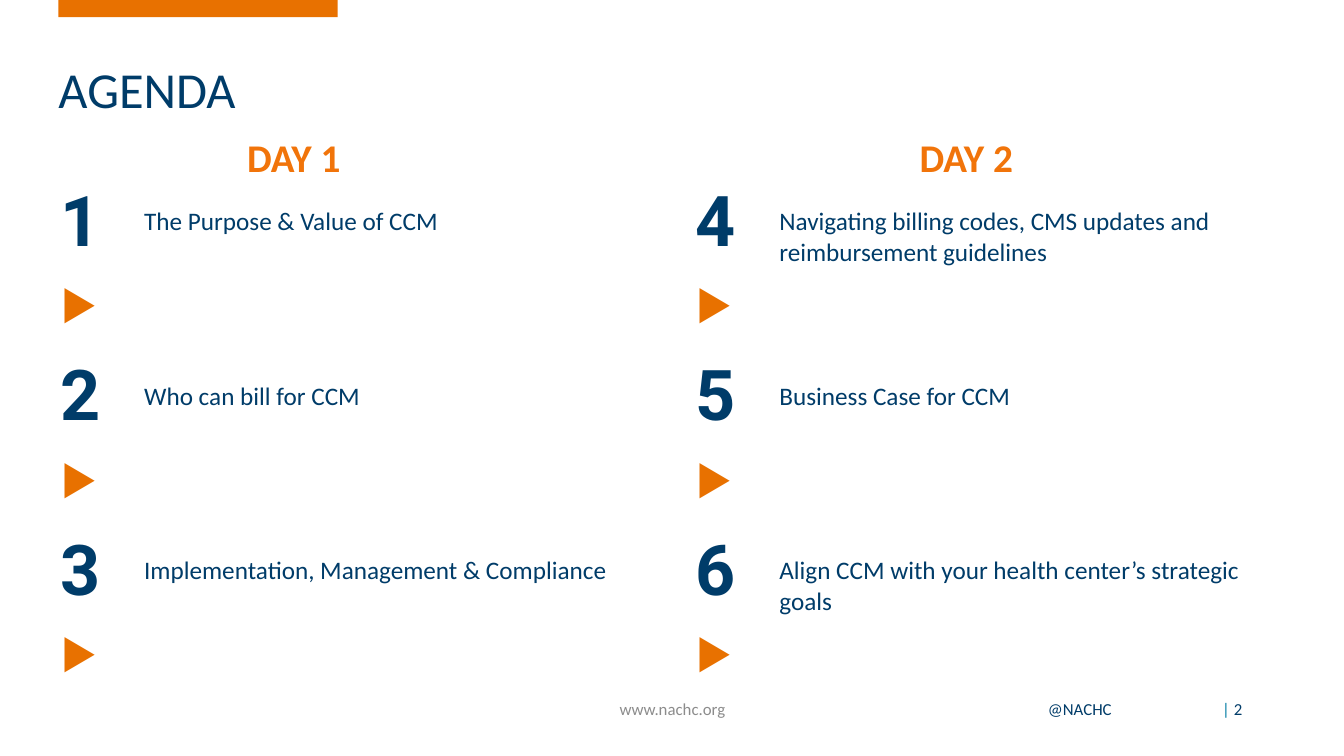
import pptx
import pptx.util
import pptx.dml.color
import pptx.enum.text
import pptx.enum.shapes

NAVY, AMBER, TEAL, GREY = "003C69", "E87100", "007CA3", "8C8C8C"
BODY = {"name": "Calibri", "size": 18, "bold": False}
DIGIT = {"name": "Roboto", "size": 50, "bold": True}
HEAD = {"name": "Calibri", "size": 28, "bold": True}
TITLE = {"name": "Calibri", "size": 36, "bold": False}
SMALL = {"name": "Calibri", "size": 12, "bold": False}

DAYS = [
    ("DAY 1", 0.5, 2.25, [
        "The Purpose & Value of CCM",
        "Who can bill for CCM",
        "Implementation, Management & Compliance",
    ]),
    ("DAY 2", 6.8, 8.92, [
        "Navigating billing codes, CMS updates and reimbursement guidelines",
        "Business Case for CCM",
        "Align CCM with your health center’s strategic goals",
    ]),
]
FOOT = [
    ((9.58, 2.26), "CENTER", [("@NACHC", NAVY)]),
    ((5.37, 2.6), "CENTER", [("www.nachc.org", GREY)]),
    ((9.42, 3), "RIGHT", [("| ", TEAL), ("2", NAVY)]),
]
MARK = "‣"
COLS = (0.83, 4.92)
TOP, ROW = 1.75, 1.73

inch = pptx.util.Inches
align = pptx.enum.text.PP_ALIGN
anchor = pptx.enum.text.MSO_ANCHOR


def color(code):
    return pptx.dml.color.RGBColor.from_string(code)


def write(frame, runs, form, side="LEFT", lead=None):
    """Fill the first paragraph with (text, colour) runs in one format."""
    para = frame.paragraphs[0]
    para.alignment = align[side]
    if lead:
        para.line_spacing = lead
    for text, code in runs:
        run = para.add_run()
        run.text = text
        for key, value in form.items():
            setattr(run.font, key, pptx.util.Pt(value) if key == "size" else value)
        run.font.color.rgb = color(code)


def setup(frame, **form):
    frame.word_wrap = True
    frame.auto_size = pptx.enum.text.MSO_AUTO_SIZE.NONE
    for key, value in form.items():
        setattr(frame, key, value)


def agenda(slide, left, first, topics):
    """Add one day's table of numbered topics."""
    box = [inch(n) for n in (left, TOP, sum(COLS), ROW * len(topics))]
    table = slide.shapes.add_table(len(topics), len(COLS), *box).table
    table.first_row = table.horz_banding = False
    for col, wide in zip(table.columns, COLS):
        col.width = inch(wide)
    for row, topic in enumerate(topics):
        digit, label = table.cell(row, 0), table.cell(row, 1)
        for cell in (digit, label):
            cell.fill.background()
        label.margin_top = inch(0.3)
        write(digit.text_frame, [(str(first + row), NAVY), (MARK, AMBER)], DIGIT)
        write(label.text_frame, [(topic, NAVY)], BODY)


def main():
    deck = pptx.Presentation()
    deck.slide_width, deck.slide_height = inch(13.33), inch(7.5)
    slide = deck.slides.add_slide(deck.slide_layouts.get_by_name("Title Only"))
    shapes = slide.shapes
    flush = dict.fromkeys(
        ("margin_left", "margin_top", "margin_right", "margin_bottom"), 0)
    flush["vertical_anchor"] = anchor.TOP

    bar = shapes.add_shape(pptx.enum.shapes.MSO_SHAPE.RECTANGLE,
                           inch(0.58), 0, inch(2.77), inch(0.17))
    bar.shadow.inherit = False
    bar.fill.solid()
    bar.fill.fore_color.rgb = color(AMBER)
    bar.line.fill.background()

    title = shapes.title
    title.left, title.top, title.width, title.height = (
        inch(n) for n in (0.58, 0.67, 8.58, 0.72))
    setup(title.text_frame, **flush)
    write(title.text_frame, [("AGENDA", NAVY)], TITLE, lead=0.85)

    first = 1
    for name, left, mid, topics in DAYS:
        agenda(slide, left, first, topics)
        first += len(topics)
        head = shapes.add_textbox(inch(mid), inch(1.39), inch(1.33), inch(0.72))
        setup(head.text_frame, **flush)
        write(head.text_frame, [(name, "F1740A")], HEAD, "CENTER", 0.85)

    for (left, wide), side, runs in FOOT:
        foot = shapes.add_textbox(inch(left), inch(6.83), inch(wide), inch(0.4))
        setup(foot.text_frame, vertical_anchor=anchor.MIDDLE)
        write(foot.text_frame, runs, SMALL, side)

    deck.save("out.pptx")


if __name__ == "__main__":
    main()
